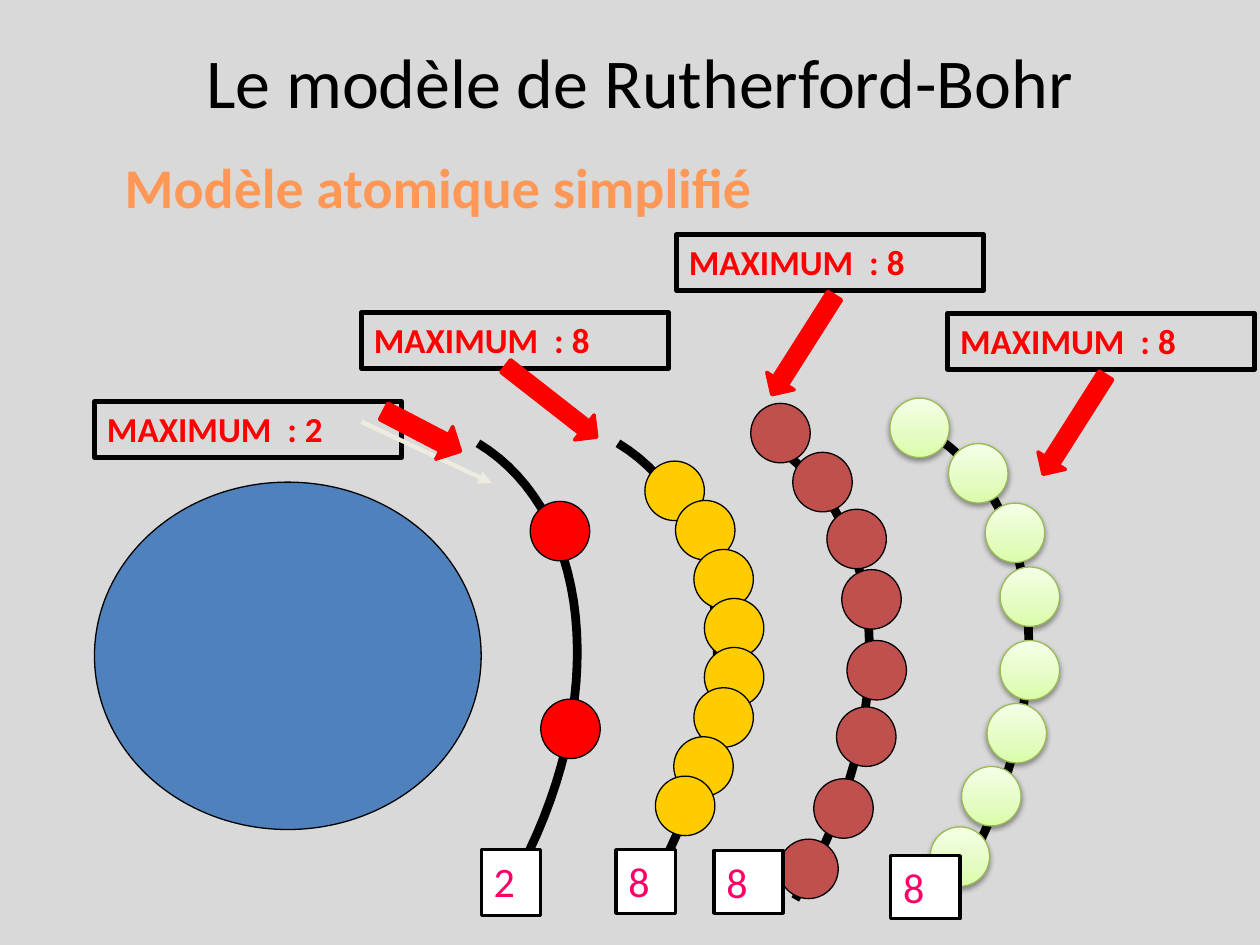
"""Build the slide on the Rutherford-Bohr model and its electron shells."""
from copy import deepcopy
from dataclasses import dataclass
from math import cos, pi, sin
from typing import Optional

from lxml.etree import SubElement
from pptx import Presentation
from pptx.dml.color import RGBColor
from pptx.enum.shapes import MSO_CONNECTOR as Connector, MSO_SHAPE as Shape
from pptx.enum.text import MSO_ANCHOR as Anchor, MSO_AUTO_SIZE as AutoSize, PP_ALIGN as Align
from pptx.oxml.ns import qn
from pptx.util import Pt

FONT = "Calibri"
BACKGROUND = RGBColor(0xD9, 0xD9, 0xD9)
BLACK = RGBColor(0x00, 0x00, 0x00)
WHITE = RGBColor(0xFF, 0xFF, 0xFF)
RED = RGBColor(0xFF, 0x00, 0x00)
YELLOW = RGBColor(0xFF, 0xCC, 0x00)
BROWN = RGBColor(0xC0, 0x50, 0x4D)
BLUE = RGBColor(0x4F, 0x81, 0xBD)
ORANGE = RGBColor(0xFF, 0x98, 0x56)
PINK = RGBColor(0xFF, 0x00, 0x66)
BEIGE = RGBColor(0xEE, 0xEC, 0xE1)
GREEN_LINE = RGBColor(0x98, 0xB9, 0x55)
GREEN_STOPS = (
    (0, RGBColor(0xDA, 0xFD, 0xA7)),
    (0.35, RGBColor(0xE4, 0xFC, 0xC2)),
    (1, RGBColor(0xF5, 0xFF, 0xE7)),
)

ELECTRON_SIZE = 34
LABEL_SIZE = (175.5, 32)
ARC_SIZE = (147.6, 215.3)
ARC_ROTATION = 31.3
ARC_STEPS = 32


@dataclass
class Box:
    left: float
    top: float
    width: float
    height: float
    rotation: float = 0


@dataclass
class Shell:
    color: Optional[RGBColor]
    arc: tuple[float, float]
    label: tuple[float, float]
    arrow: Box
    count: Box
    count_line: float
    electrons: list[tuple[float, float]]


SHELLS = [
    Shell(RED, (206.5, 276), (54, 229.5), Box(216.5, 236, 49.5, 21, 27.5),
          Box(275, 485.5, 34, 37.5), 1.75, [(303, 286.5), (309, 399.5)]),
    Shell(YELLOW, (286.5, 276), (206.5, 178.5), Box(282, 220.5, 66, 18, 38),
          Box(352, 485.5, 34, 36.5), 1.75,
          [(368.5, 263.5), (386, 286), (396.5, 314), (402.5, 342),
           (402.5, 370), (396.5, 393), (385, 421), (374.5, 443.5)]),
    Shell(BROWN, (373.5, 276), (386.5, 134), Box(425.5, 188, 67, 18.5, 122.4),
          Box(408, 486, 39.5, 36), 1.75,
          [(429, 230.5), (453, 258.5), (472.5, 291), (481, 325.5),
           (484, 366), (478, 404), (465, 445), (445, 479.5)]),
    Shell(None, (464.5, 270), (541.5, 179), Box(580.5, 233.5, 67, 18.5, 122.4),
          Box(509, 489, 39.5, 36), 2,
          [(508.5, 227.5), (542, 253.5), (563, 287.5), (571.5, 324),
           (571.5, 366), (564, 402), (549.5, 438), (531.5, 472.5)]),
]


def place(shape, box: Box) -> None:
    shape.left, shape.top = Pt(box.left), Pt(box.top)
    shape.width, shape.height = Pt(box.width), Pt(box.height)


def add_run(paragraph, text: str, size: float, color: RGBColor, bold: bool = False) -> None:
    run = paragraph.add_run()
    run.text = text
    run.font.name = FONT
    run.font.size = Pt(size)
    run.font.bold = bold
    run.font.color.rgb = color


def set_line(shape, color: RGBColor, width: float) -> None:
    shape.line.color.rgb = color
    shape.line.width = Pt(width)


def draw_shape(slide, kind: Shape, box: Box, fill: Optional[RGBColor],
               line: RGBColor, line_width: float):
    shape = slide.shapes.add_shape(kind, Pt(box.left), Pt(box.top), Pt(box.width), Pt(box.height))
    shape.rotation = box.rotation
    shape.shadow.inherit = False
    if fill is None:
        shape.fill.background()
    else:
        shape.fill.solid()
        shape.fill.fore_color.rgb = fill
    set_line(shape, line, line_width)
    return shape


def draw_text_box(slide, box: Box, text: str, size: float, color: RGBColor, bold: bool,
                  fill: Optional[RGBColor], line_width: float) -> None:
    frame = draw_shape(slide, Shape.RECTANGLE, box, fill, BLACK, line_width).text_frame
    frame.word_wrap = True
    frame.vertical_anchor = Anchor.TOP
    paragraph = frame.paragraphs[0]
    paragraph.alignment = Align.LEFT
    add_run(paragraph, text, size, color, bold)


def draw_arc(slide, left: float, top: float) -> None:
    width, height = ARC_SIZE
    angles = [pi / 2 * step / ARC_STEPS for step in range(ARC_STEPS + 1)]
    points = [(Pt(left + width * sin(angle)), Pt(top + height * (1 - cos(angle))))
              for angle in angles]
    builder = slide.shapes.build_freeform(*points[0])
    builder.add_line_segments(points[1:], close=False)
    arc = builder.convert_to_shape()
    arc.rotation = ARC_ROTATION
    arc.shadow.inherit = False
    arc.fill.background()
    set_line(arc, BLACK, 5)


def apply_green_gloss(electron) -> None:
    electron.fill.gradient()
    electron.fill.gradient_angle = 90
    properties = electron._element.spPr
    stop_list = properties.find(".//" + qn("a:gsLst"))
    stop_list.insert(1, deepcopy(stop_list[0]))
    for stop, (position, color) in zip(electron.fill.gradient_stops, GREEN_STOPS):
        stop.position = position
        stop.color.rgb = color
    shadow = SubElement(properties.find(qn("a:effectLst")), qn("a:outerShdw"),
                        blurRad=str(Pt(3.1)), dist=str(Pt(1.6)), dir="5400000", rotWithShape="0")
    shadow_color = SubElement(shadow, qn("a:srgbClr"), val=str(BLACK))
    SubElement(shadow_color, qn("a:alpha"), val="38000")


def draw_electron(slide, left: float, top: float, color: Optional[RGBColor]) -> None:
    line = GREEN_LINE if color is None else BLACK
    box = Box(left, top, ELECTRON_SIZE, ELECTRON_SIZE)
    electron = draw_shape(slide, Shape.OVAL, box, color, line, 0.75)
    if color is None:
        apply_green_gloss(electron)


def draw_shell(slide, shell: Shell) -> None:
    draw_arc(slide, *shell.arc)
    for left, top in shell.electrons:
        draw_electron(slide, left, top, shell.color)
    count = len(shell.electrons)
    draw_text_box(slide, Box(*shell.label, *LABEL_SIZE), f"MAXIMUM  : {count}",
                  20, RED, True, None, 2.75)
    draw_text_box(slide, shell.count, str(count), 24, PINK, False, WHITE, shell.count_line)


def draw_pointer(slide) -> None:
    pointer = slide.shapes.add_connector(
        Connector.STRAIGHT, Pt(206.5), Pt(241), Pt(281), Pt(276))
    set_line(pointer, BEIGE, 2.5)
    SubElement(pointer.line._get_or_add_ln(), qn("a:tailEnd"), type="triangle")
    SubElement(pointer._element.spPr, qn("a:effectLst"))


def fill_headings(slide) -> None:
    title, body = slide.shapes.title, slide.placeholders[1]
    place(title, Box(108, 18, 515, 55.5))
    title.text_frame.word_wrap = False
    add_run(title.text_frame.paragraphs[0], "Le modèle de Rutherford-Bohr", 40, BLACK)

    place(body, Box(64, 83.5, 602, 62))
    body.text_frame.auto_size = AutoSize.NONE
    paragraph = body.text_frame.paragraphs[0]
    properties = paragraph._p.get_or_add_pPr()
    properties.set("marL", "0")
    properties.set("indent", "0")
    SubElement(properties, qn("a:buNone"))
    paragraph.space_before = Pt(0)
    add_run(paragraph, "Modèle atomique simplifié", 32, ORANGE, True)


def main() -> None:
    presentation = Presentation()
    presentation.slide_width, presentation.slide_height = Pt(720), Pt(540)
    slide = presentation.slides.add_slide(presentation.slide_layouts[1])
    slide.background.fill.solid()
    slide.background.fill.fore_color.rgb = BACKGROUND
    fill_headings(slide)
    draw_shape(slide, Shape.OVAL, Box(54, 275.5, 221, 198.5), BLUE, BLACK, 0.75)
    for shell in SHELLS:
        draw_shell(slide, shell)
    draw_pointer(slide)
    for shell in SHELLS:
        draw_shape(slide, Shape.RIGHT_ARROW, shell.arrow, RED, RED, 2)
    presentation.save("out.pptx")


if __name__ == "__main__":
    main()
